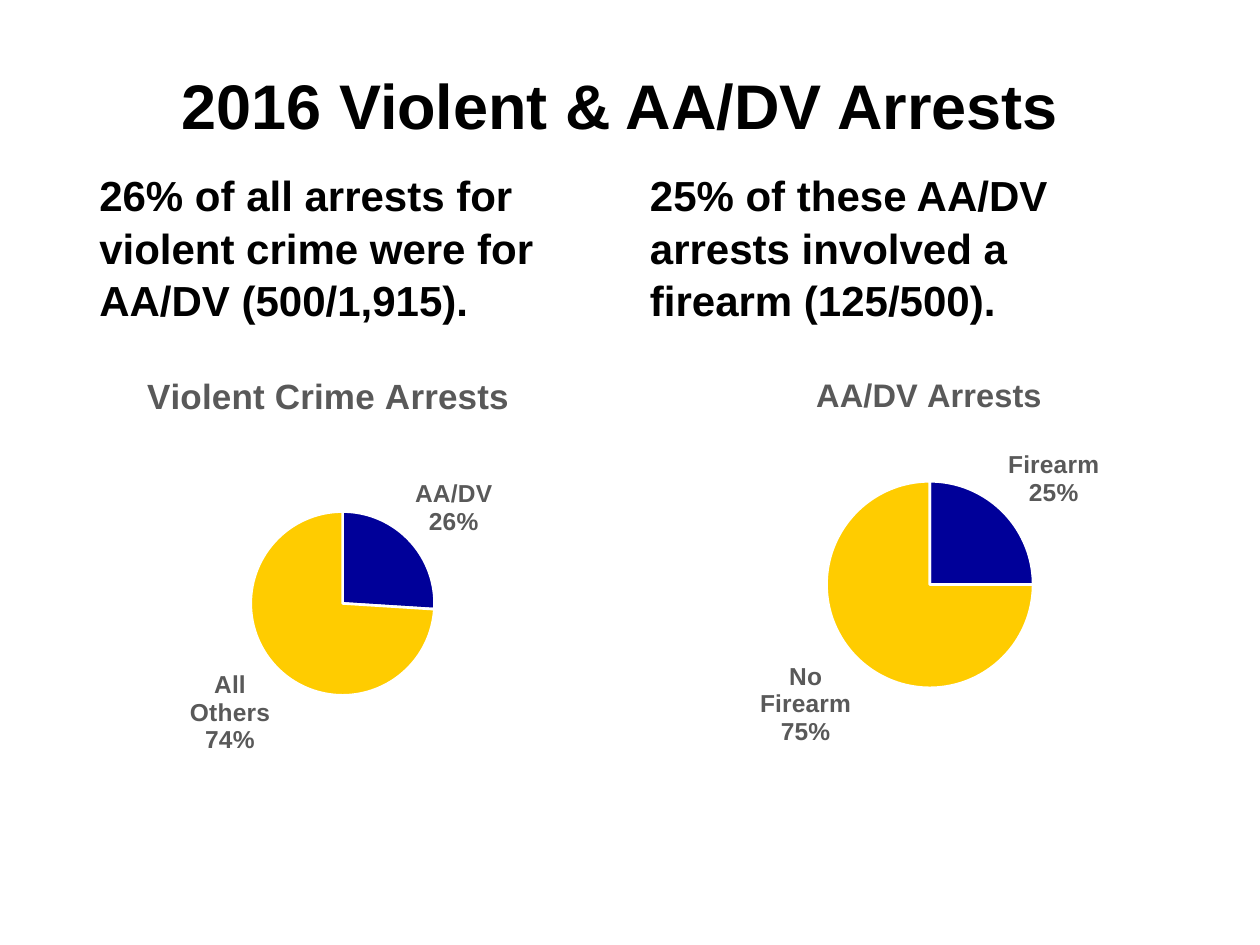
from dataclasses import dataclass

from lxml import etree
from pptx import Presentation
from pptx.chart.data import CategoryChartData
from pptx.dml.color import RGBColor
from pptx.enum.chart import XL_CHART_TYPE, XL_LABEL_POSITION
from pptx.enum.text import MSO_ANCHOR, PP_ALIGN
from pptx.oxml.ns import qn
from pptx.util import Inches, Pt

PIE = XL_CHART_TYPE.PIE
OUTSIDE_END = XL_LABEL_POSITION.OUTSIDE_END
BOTTOM = MSO_ANCHOR.BOTTOM
CENTER, LEFT = PP_ALIGN.CENTER, PP_ALIGN.LEFT


@dataclass(frozen=True)
class Theme:
    font: str = "Arial"
    ink: RGBColor = RGBColor(0x00, 0x00, 0x00)
    muted: RGBColor = RGBColor(0x59, 0x59, 0x59)
    paper: RGBColor = RGBColor(0xFF, 0xFF, 0xFF)
    slices: tuple = (RGBColor(0x00, 0x00, 0x99), RGBColor(0xFF, 0xCC, 0x00))
    heading: float = 36
    statement: float = 24
    label: float = 14
    chart_base: float = 10
    slice_border: float = 1.5


THEME = Theme()


def style_font(font, size, color, bold=True):
    font.name = THEME.font
    font.size = Pt(size)
    font.bold = bold
    font.color.rgb = color


def add_text(slide, box, text, size, align, inset, line_spacing):
    frame = slide.shapes.add_textbox(*map(Inches, box)).text_frame
    frame.word_wrap = True
    frame.vertical_anchor = BOTTOM
    frame.margin_left = frame.margin_right = Inches(inset)
    frame.margin_top = frame.margin_bottom = Inches(inset / 2)
    paragraph = frame.paragraphs[0]
    paragraph.text = text
    paragraph.alignment = align
    paragraph.line_spacing = line_spacing
    style_font(paragraph.font, size, THEME.ink)


def add_heading(slide, box, text):
    add_text(slide, box, text, THEME.heading, CENTER, 0, 1.0)


def add_statement(slide, box, text):
    add_text(slide, box, text, THEME.statement, LEFT, 0.1, 1.04)


def place_pie(chart, box, center, diameter):
    plot_area = chart._chartSpace.chart.plotArea
    for automatic in plot_area.findall(qn("c:layout")):
        plot_area.remove(automatic)
    layout = etree.Element(qn("c:layout"))
    manual = etree.SubElement(layout, qn("c:manualLayout"))
    left, top, width, height = box
    settings = {
        "layoutTarget": "inner",
        "xMode": "edge",
        "yMode": "edge",
        "x": (center[0] - diameter / 2 - left) / width,
        "y": (center[1] - diameter / 2 - top) / height,
        "w": diameter / width,
        "h": diameter / height,
    }
    for tag, value in settings.items():
        etree.SubElement(manual, qn(f"c:{tag}")).set("val", str(value))
    plot_area.insert(0, layout)


def add_arrest_pie(slide, box, title, title_size, shares, center, diameter):
    arrests = CategoryChartData()
    arrests.categories = list(shares)
    arrests.add_series(title, list(shares.values()))
    chart = slide.shapes.add_chart(PIE, *map(Inches, box), arrests).chart
    style_font(chart.font, THEME.chart_base, THEME.ink, bold=False)
    chart.has_legend = False

    chart.has_title = True
    heading = chart.chart_title.text_frame.paragraphs[0]
    heading.text = title
    style_font(heading.font, title_size, THEME.muted)
    chart.chart_title.include_in_layout = False

    plot = chart.plots[0]
    plot.vary_by_categories = True
    for index, color in enumerate(THEME.slices):
        look = plot.series[0].points[index].format
        look.fill.solid()
        look.fill.fore_color.rgb = color
        look.line.color.rgb = THEME.paper
        look.line.width = Pt(THEME.slice_border)

    labels = plot.series[0].data_labels
    labels.show_category_name = True
    labels.show_percentage = True
    labels.show_value = False
    labels.number_format = "0%"
    labels.number_format_is_linked = False
    labels.position = OUTSIDE_END
    style_font(labels.font, THEME.label, THEME.muted)
    place_pie(chart, box, center, diameter)


def main():
    presentation = Presentation()
    presentation.slide_width = Inches(10)
    presentation.slide_height = Inches(7.5)
    slide = presentation.slides.add_slide(presentation.slide_layouts[6])

    add_heading(slide, (0.61, 0.34, 8.62, 0.79), "2016 Violent & AA/DV Arrests")
    add_statement(
        slide,
        (0.69, 1.33, 4.23, 1.3),
        "26% of all arrests for violent crime were for AA/DV (500/1,915).",
    )
    add_arrest_pie(
        slide,
        (0.42, 2.8, 4.37, 3.38),
        "Violent Crime Arrests",
        20,
        {"AA/DV": 26, "All Others": 74},
        center=(2.72, 4.79),
        diameter=1.46,
    )
    add_statement(
        slide,
        (5.06, 1.33, 4.25, 1.3),
        "25% of these AA/DV arrests involved a firearm (125/500).",
    )
    add_arrest_pie(
        slide,
        (5.25, 2.8, 4.25, 3.34),
        "AA/DV Arrests",
        18.6,
        {"Firearm": 25, "No Firearm": 75},
        center=(7.38, 4.64),
        diameter=1.64,
    )
    presentation.save("out.pptx")


if __name__ == "__main__":
    main()
